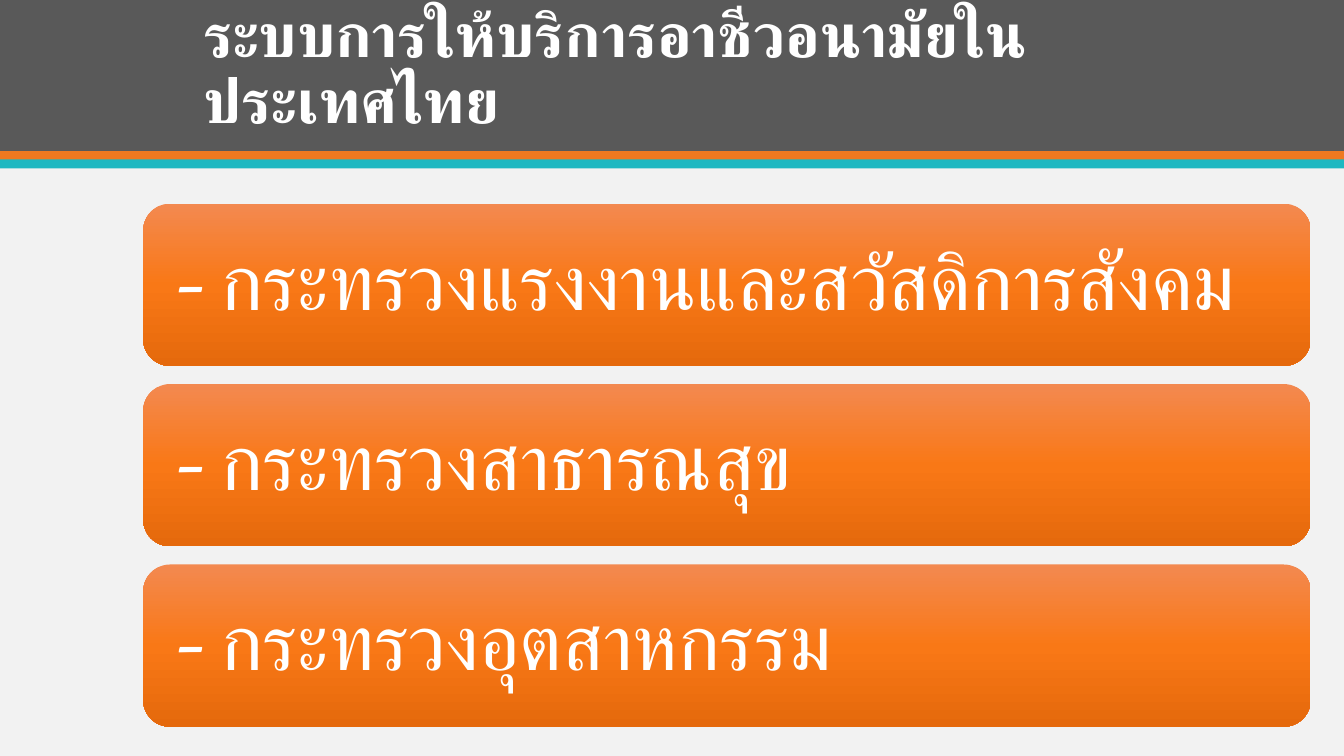
from copy import deepcopy

from pptx import Presentation
from pptx.dml.color import RGBColor
from pptx.enum.lang import MSO_LANGUAGE_ID as Language
from pptx.enum.shapes import MSO_SHAPE as Shape
from pptx.enum.text import MSO_ANCHOR as Anchor, MSO_AUTO_SIZE as AutoSize, PP_ALIGN as Align
from pptx.oxml.ns import qn
from pptx.util import Inches, Pt

WHITE = RGBColor(0xFF, 0xFF, 0xFF)
PAPER = RGBColor(0xF2, 0xF2, 0xF2)
GRAY = RGBColor(0x59, 0x59, 0x59)
ORANGE = RGBColor(0xEF, 0x79, 0x20)
TEAL = RGBColor(0x1E, 0xB8, 0xC1)
CARD_STOPS = [
    (0, RGBColor(0xF3, 0x89, 0x50)),
    (0.5, RGBColor(0xF9, 0x78, 0x16)),
    (1, RGBColor(0xE5, 0x69, 0x0C)),
]

TITLE = "ระบบการให้บริการอาชีวอนามัยในประเทศไทย"
MINISTRIES = [
    "- กระทรวงแรงงานและสวัสดิการสังคม",
    "- กระทรวงสาธารณสุข",
    "- กระทรวงอุตสาหกรรม",
]
BANDS = [(0, 1.5, GRAY), (1.5, 0.09, ORANGE), (1.58, 0.09, TEAL)]

WIDTH, HEIGHT = 13.33, 7.5
CARD_LEFT, CARD_TOP, CARD_WIDTH, CARD_HEIGHT = 1.42, 2.02, 11.58, 1.61
CARD_PITCH = 1.79
CARD_INSET = 0.23


def add_plain_shape(page, kind, left, top, width, height):
    """Add a shape without outline or shadow."""
    shape = page.shapes.add_shape(
        kind, Inches(left), Inches(top), Inches(width), Inches(height))
    shape.shadow.inherit = False
    shape.line.fill.background()
    return shape


def fill_gradient(shape, stops):
    """Fill a shape from top to bottom with any number of colour stops."""
    shape.fill.gradient()
    shape.fill.gradient_angle = 270
    stop_list = next(shape._element.spPr.iter(qn("a:gsLst")))
    while len(stop_list) < len(stops):
        stop_list.append(deepcopy(stop_list[0]))
    for stop, (position, color) in zip(shape.fill.gradient_stops, stops):
        stop.position = position
        stop.color.rgb = color


def write_line(frame, text, font, size, bold=False):
    para = frame.paragraphs[0]
    para.alignment = Align.LEFT
    para.line_spacing = 0.9
    span = para.add_run()
    span.text = text
    span.font.name = font
    span.font.size = Pt(size)
    span.font.bold = bold
    span.font.color.rgb = WHITE
    span.font.language_id = Language.THAI
    return para


def add_bands(page):
    for top, height, color in BANDS:
        band = add_plain_shape(page, Shape.RECTANGLE, 0, top, WIDTH, height)
        band.fill.solid()
        band.fill.fore_color.rgb = color


def set_title(page):
    title = page.shapes.title
    title.left, title.top = Inches(1.42), Inches(0.28)
    title.width, title.height = Inches(10.5), Inches(1.13)
    frame = title.text_frame
    frame.word_wrap = True
    frame.auto_size = AutoSize.NONE
    frame.vertical_anchor = Anchor.BOTTOM
    para = write_line(frame, TITLE, "Roboto", 44, bold=True)
    properties = para._p.get_or_add_pPr()
    properties.set("marL", str(Inches(0.5)))
    properties.set("indent", "0")
    page.shapes._spTree.append(title._element)  # in front of the bands


def add_card(page, index, text):
    card = add_plain_shape(page, Shape.ROUNDED_RECTANGLE, CARD_LEFT,
                           CARD_TOP + index * CARD_PITCH, CARD_WIDTH, CARD_HEIGHT)
    fill_gradient(card, CARD_STOPS)
    frame = card.text_frame
    frame.word_wrap = True
    frame.vertical_anchor = Anchor.MIDDLE
    frame.margin_left = frame.margin_right = Inches(CARD_INSET)
    frame.margin_top = frame.margin_bottom = Inches(CARD_INSET)
    write_line(frame, text, "Vollkorn", 56)


def main():
    deck = Presentation()
    deck.slide_width, deck.slide_height = Inches(WIDTH), Inches(HEIGHT)
    page = deck.slides.add_slide(deck.slide_layouts.get_by_name("Title Only"))
    page.background.fill.solid()
    page.background.fill.fore_color.rgb = PAPER
    add_bands(page)
    set_title(page)
    for index, ministry in enumerate(MINISTRIES):
        add_card(page, index, ministry)
    deck.save("out.pptx")


if __name__ == "__main__":
    main()
